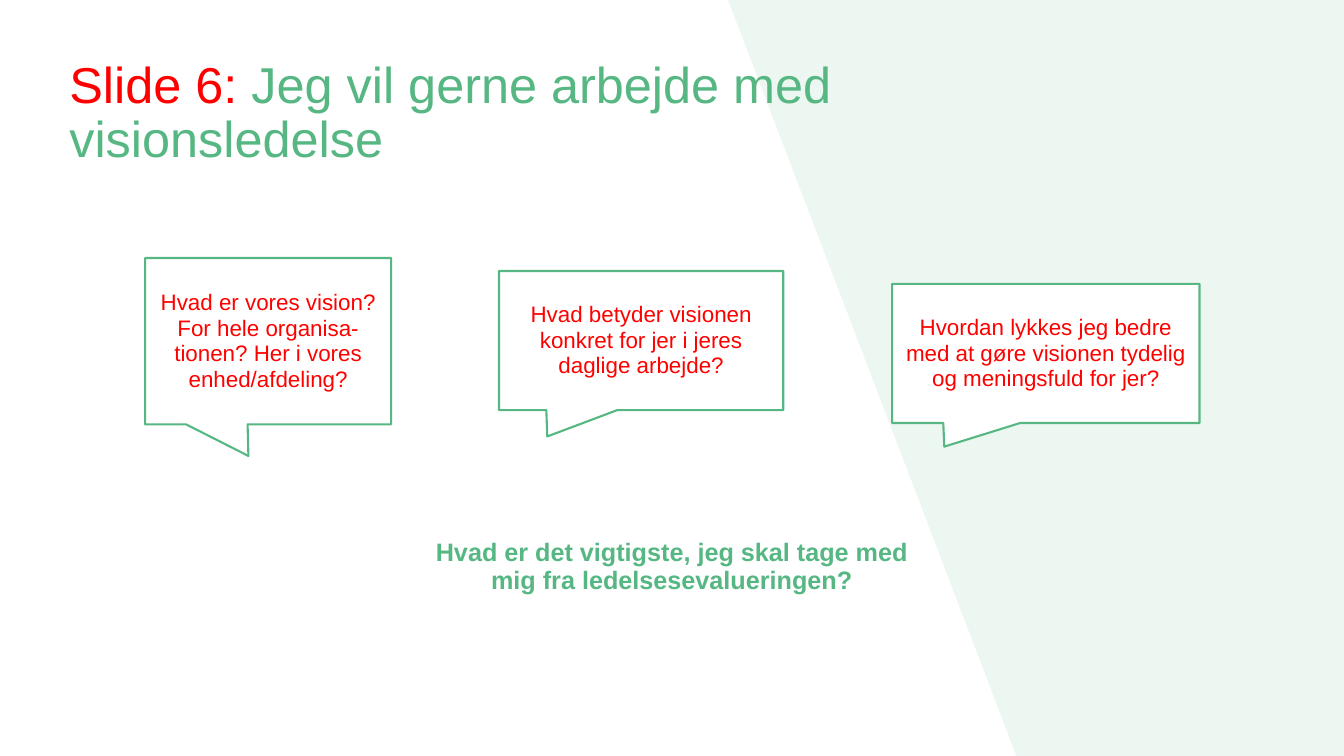
from lxml import etree
from pptx import Presentation
from pptx.dml.color import RGBColor
from pptx.enum.shapes import MSO_SHAPE
from pptx.enum.text import MSO_ANCHOR, PP_ALIGN
from pptx.oxml.ns import qn
from pptx.util import Inches, Pt

CALLOUT = MSO_SHAPE.RECTANGULAR_CALLOUT
MIDDLE, TOP = MSO_ANCHOR.MIDDLE, MSO_ANCHOR.TOP
LEFT, CENTER = PP_ALIGN.LEFT, PP_ALIGN.CENTER

COLS, ROWS = 160, 90
WIDTH, HEIGHT = Inches(13.33), Inches(7.5)
COLORS = {"green": "56B783", "red": "FF0000", "white": "FFFFFF"}


class SlideBuilder:
    """Holds the style and the slide; positions are grid columns and rows."""

    font = "Arial"

    def __init__(self, slide):
        self.slide = slide

    def color(self, name):
        return RGBColor.from_string(COLORS[name])

    def box(self, col, row, cols, rows):
        return (round(col * WIDTH / COLS), round(row * HEIGHT / ROWS),
                round(cols * WIDTH / COLS), round(rows * HEIGHT / ROWS))

    def fill_text(self, sp, runs, size, align, anchor, spacing, bold=False):
        tf = sp.text_frame
        tf.word_wrap = True
        tf.vertical_anchor = anchor
        p = tf.paragraphs[0]
        p.alignment = align
        p.line_spacing = spacing
        for text, color in runs:
            r = p.add_run()
            r.text = text
            r.font.name = self.font
            r.font.size = Pt(size)
            r.font.bold = bold
            r.font.color.rgb = self.color(color)

    def text(self, box, runs, size, align=LEFT, anchor=TOP, spacing=0.95, bold=False):
        sp = self.slide.shapes.add_textbox(*self.box(*box))
        self.fill_text(sp, runs, size, align, anchor, spacing, bold)

    def callout(self, box, tip, text):
        sp = self.slide.shapes.add_shape(CALLOUT, *self.box(*box))
        sp.shadow.inherit = False
        sp.adjustments[0], sp.adjustments[1] = tip
        sp.fill.solid()
        sp.fill.fore_color.rgb = self.color("white")
        sp.line.color.rgb = self.color("green")
        sp.line.width = Pt(1.5)
        self.fill_text(sp, [(text, "red")], 16, CENTER, MIDDLE, 0.95)

    def panel(self, points, color, opacity):
        scaled = [self.box(col, row, 0, 0)[:2] for col, row in points]
        fb = self.slide.shapes.build_freeform(*scaled[0])
        fb.add_line_segments(scaled[1:], close=True)
        sp = fb.convert_to_shape()
        sp.shadow.inherit = False
        sp.line.fill.background()
        sp.fill.solid()
        sp.fill.fore_color.rgb = self.color(color)
        clr = next(sp.element.spPr.iter(qn("a:srgbClr")))
        etree.SubElement(clr, qn("a:alpha")).set("val", str(opacity * 1000))


def main():
    prs = Presentation()
    prs.slide_width, prs.slide_height = WIDTH, HEIGHT
    page = SlideBuilder(prs.slides.add_slide(prs.slide_layouts[6]))

    # Slanted background panel
    page.panel([(86.67, 0), (121, ROWS), (COLS, ROWS), (COLS, 0)], "green", 10)

    # Title
    page.text((7.08, 6.96, 104.9, 13.32),
              [("Slide 6:", "red"),
               (" Jeg vil gerne arbejde med visionsledelse", "green")],
              36, anchor=MIDDLE, spacing=0.9)

    # Question callouts, each starting a little lower than the one before
    questions = [
        (17.28, 29.28, 19.8, (-0.08, 0.69),
         "Hvad er vores vision? For hele organisa-tionen? Her i vores enhed/afdeling?"),
        (59.4, 33.84, 16.56, (-0.33, 0.69),
         "Hvad betyder visionen konkret for jer i jeres daglige arbejde?"),
        (106.2, 36.6, 16.56, (-0.33, 0.67),
         "Hvordan lykkes jeg bedre med at gøre visionen tydelig og meningsfuld for jer?"),
    ]
    for i, (col, cols, rows, tip, text) in enumerate(questions):
        page.callout((col, 30.72 + 1.54 * i, cols, rows), tip, text)

    # Closing question
    page.text((50.4, 63.48, 59.16, 8.16),
              [("Hvad er det vigtigste, jeg skal tage med mig fra "
                "ledelsesevalueringen?", "green")],
              18, align=CENTER, bold=True)

    prs.save("out.pptx")


if __name__ == "__main__":
    main()
